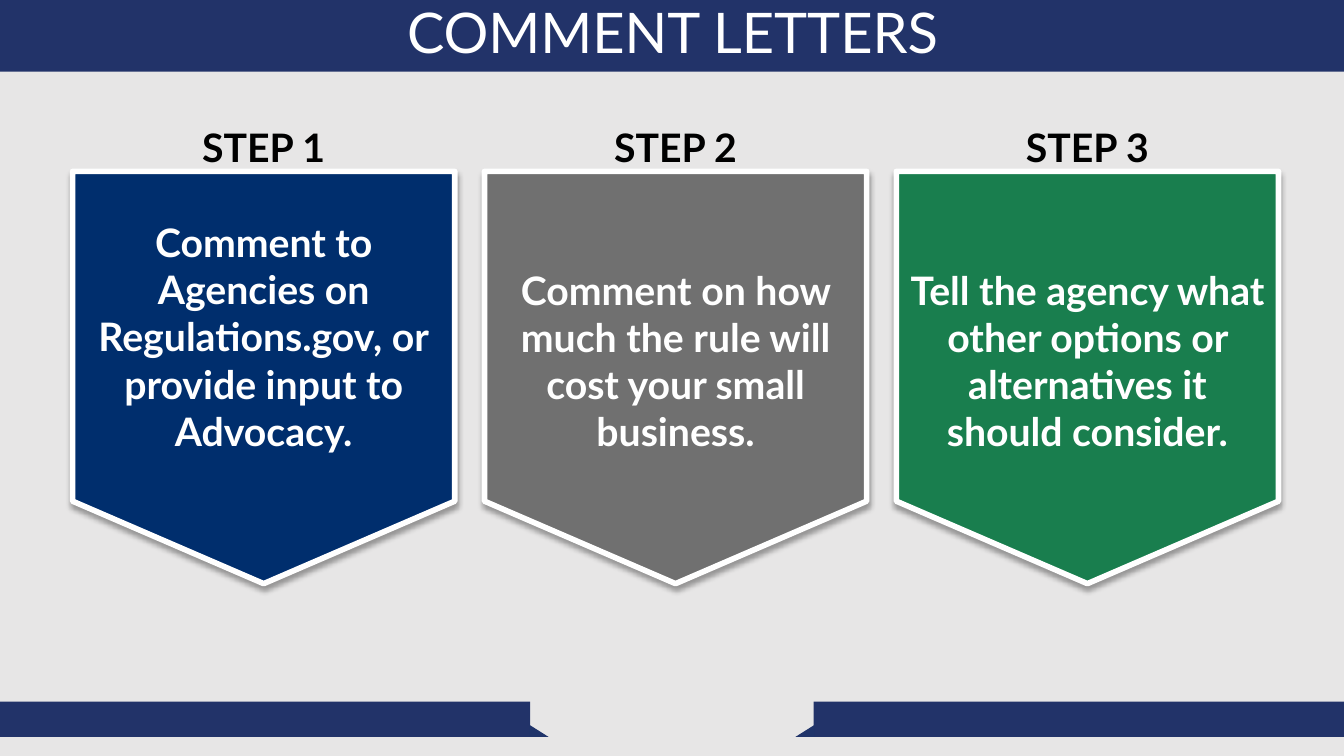
from dataclasses import dataclass

from lxml import etree
from pptx import Presentation
from pptx.dml.color import RGBColor
from pptx.enum.shapes import MSO_SHAPE as SHAPE
from pptx.enum.text import MSO_ANCHOR as ANCHOR, MSO_AUTO_SIZE as AUTOSIZE, PP_ALIGN as ALIGN
from pptx.oxml.ns import qn
from pptx.util import Inches, Pt

SLIDE_W, SLIDE_H = 13.33, 7.5
NAVY, WHITE, BLACK = "223369", "FFFFFF", "000000"
FONT = "Lato"

FIRST_LEFT, LAST_LEFT = 0.72, 8.89
CARD_TOP, CARD_W, CARD_H = 1.7, 3.79, 4.09
LABEL_TOP, LABEL_W, LABEL_H = 1.17, 1.67, 0.57


@dataclass
class Step:
    color: str
    lines: list[str]
    top_inset: float


STEPS = [
    Step("002E6D", ["Comment to Agencies on Regulations.gov, or",
                    "provide input to Advocacy."], 0.05),
    Step("707070", ["Comment on how much the rule will cost your small business."], 0.52),
    Step("197E4E", ["Tell the agency what other options or alternatives it should consider."], 0.52),
]


def rgb(color: str) -> RGBColor:
    return RGBColor.from_string(color)


def add_shape(s, kind, left: float, top: float, width: float, height: float, color: str):
    sp = s.shapes.add_shape(kind, Inches(left), Inches(top), Inches(width), Inches(height))
    sp.shadow.inherit = False
    sp.fill.solid()
    sp.fill.fore_color.rgb = rgb(color)
    sp.line.fill.background()
    return sp


def add_shadow(sp) -> None:
    effects = sp.element.spPr.find(qn("a:effectLst"))
    shadow = etree.SubElement(effects, qn("a:outerShdw"), blurRad=str(Pt(4)),
                              dist=str(Pt(3)), dir="5400000", rotWithShape="0")
    color = etree.SubElement(shadow, qn("a:srgbClr"), val=BLACK)
    etree.SubElement(color, qn("a:alpha"), val="35000")


def write(tf, lines: list[str], size: float, color: str, bold: bool) -> None:
    tf.text = "\n".join(lines)
    for p in tf.paragraphs:
        p.alignment = ALIGN.CENTER
        for r in p.runs:
            r.font.name, r.font.size, r.font.bold = FONT, Pt(size), bold
            r.font.color.rgb = rgb(color)


def add_footer_half(s, mirrored: bool) -> None:
    for kind, left, top, width, height, color in (
        (SHAPE.RECTANGLE, 0, 6.96, 5.26, 0.35, NAVY),
        (SHAPE.RIGHT_TRIANGLE, 5.25, 7.19, 0.19, 0.12, "20346A"),
    ):
        x = SLIDE_W - left - width if mirrored else left
        sp = add_shape(s, kind, x, top, width, height, color)
        if mirrored and kind == SHAPE.RIGHT_TRIANGLE:
            sp.element.spPr.find(qn("a:xfrm")).set("flipH", "1")


def add_step(s, number: int, step: Step) -> None:
    left = FIRST_LEFT + (number - 1) * (LAST_LEFT - FIRST_LEFT) / (len(STEPS) - 1)
    card = add_shape(s, SHAPE.FLOWCHART_OFFPAGE_CONNECTOR, left, CARD_TOP, CARD_W, CARD_H, step.color)
    card.line.color.rgb = rgb(WHITE)
    card.line.width = Pt(4)
    add_shadow(card)
    tf = card.text_frame
    tf.word_wrap = True
    tf.vertical_anchor = ANCHOR.MIDDLE
    tf.margin_top = Inches(step.top_inset)
    write(tf, step.lines, 28, WHITE, True)

    label = s.shapes.add_textbox(Inches(left + (CARD_W - LABEL_W) / 2), Inches(LABEL_TOP),
                                 Inches(LABEL_W), Inches(LABEL_H))
    label.text_frame.word_wrap = True
    label.text_frame.auto_size = AUTOSIZE.SHAPE_TO_FIT_TEXT
    write(label.text_frame, [f"STEP {number}"], 28, BLACK, True)


def add_title(s, text: str) -> None:
    title = s.shapes.title
    title.left, title.top = Inches(0.92), Inches(-0.2)
    title.width, title.height = Inches(11.5), Inches(1.1)
    tf = title.text_frame
    tf.word_wrap = True
    tf.auto_size = AUTOSIZE.NONE
    tf.vertical_anchor = ANCHOR.MIDDLE
    write(tf, [text], 40, WHITE, False)
    tf.paragraphs[0].line_spacing = 0.9
    # Bring the title in front of the header bar
    title.element.getparent().append(title.element)


def main() -> None:
    prs = Presentation()
    prs.slide_width, prs.slide_height = Inches(SLIDE_W), Inches(SLIDE_H)
    s = prs.slides.add_slide(prs.slide_layouts[5])
    s.background.fill.solid()
    s.background.fill.fore_color.rgb = rgb("E7E6E6")

    # Header and footer bands
    add_shape(s, SHAPE.RECTANGLE, 0, 0, SLIDE_W, 0.71, NAVY)
    for mirrored in (False, True):
        add_footer_half(s, mirrored)

    # Steps
    for number, step in enumerate(STEPS, start=1):
        add_step(s, number, step)

    add_title(s, "COMMENT LETTERS")
    prs.save("out.pptx")


if __name__ == "__main__":
    main()
